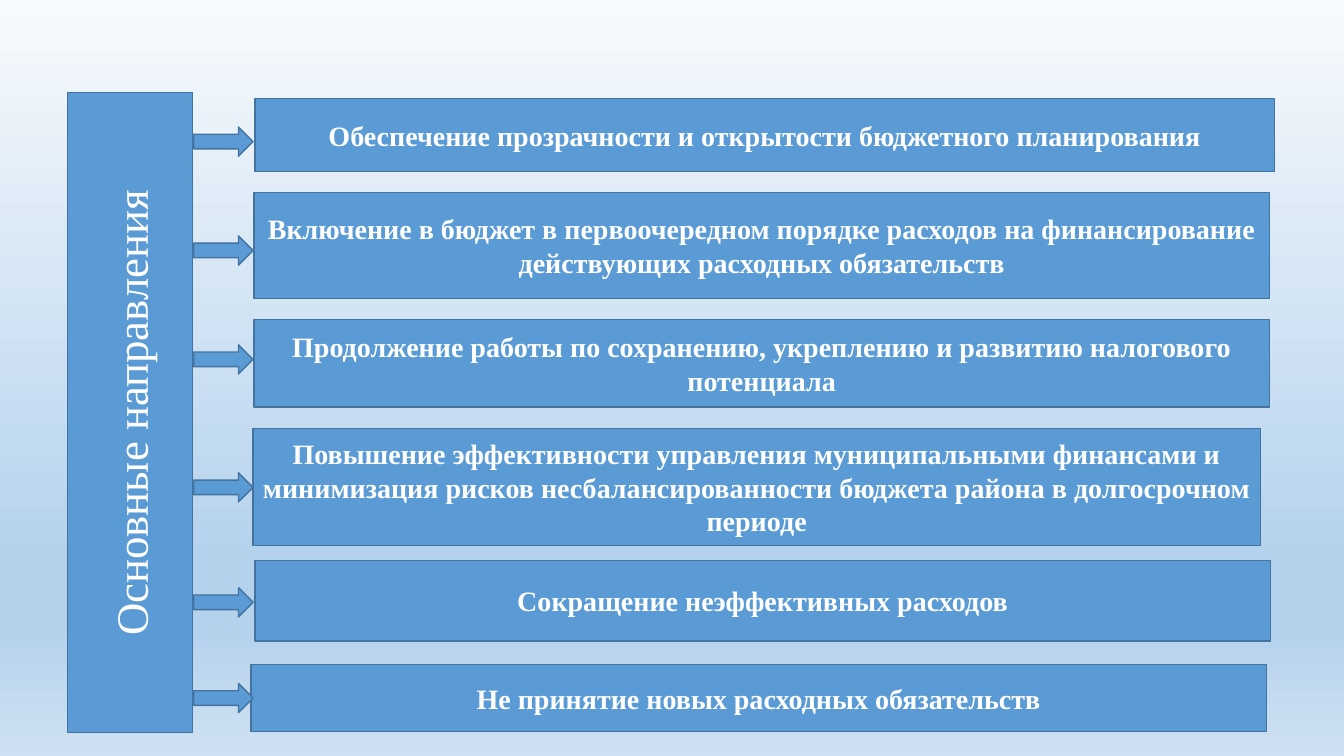
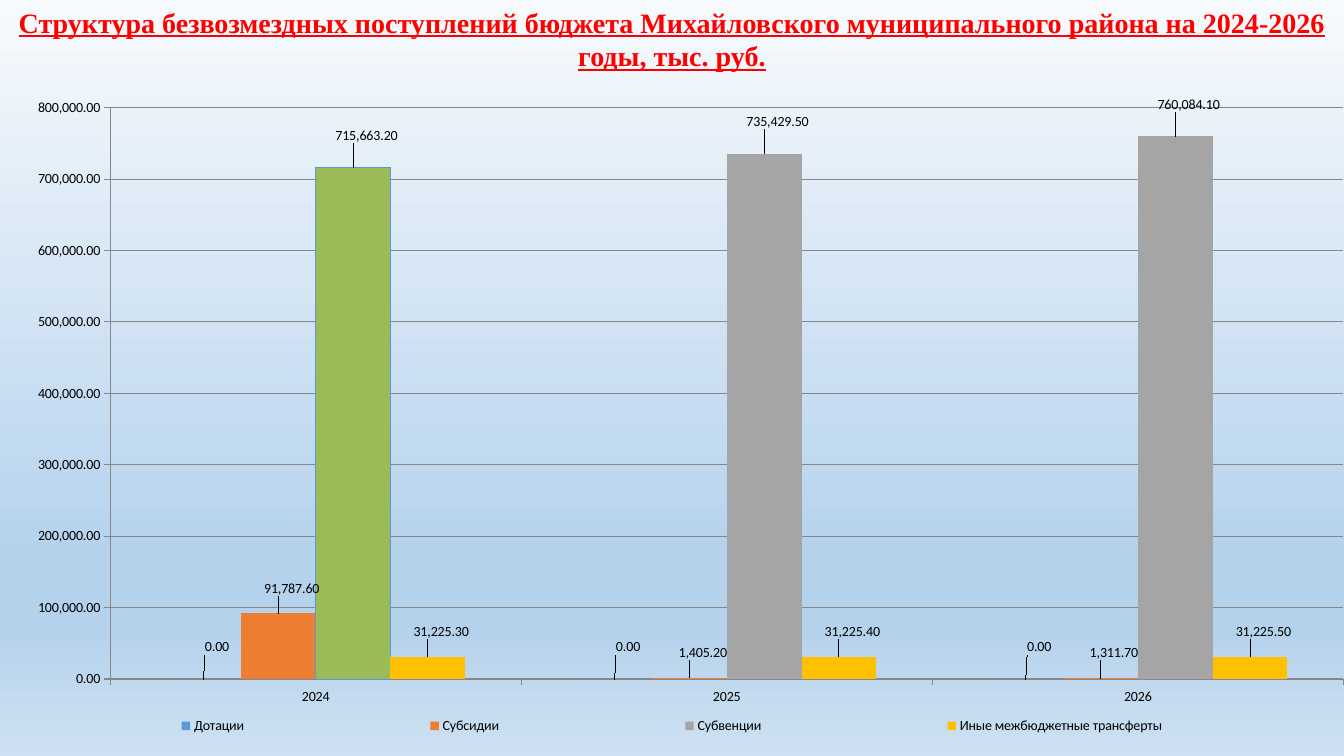
"""Builds two budget slides: the main policy directions and the transfer structure chart."""
from dataclasses import dataclass

from lxml import etree
from pptx import Presentation
from pptx.chart.data import CategoryChartData
from pptx.dml.color import RGBColor
from pptx.enum.chart import XL_CHART_TYPE, XL_LABEL_POSITION, XL_LEGEND_POSITION, XL_TICK_MARK
from pptx.enum.shapes import MSO_SHAPE
from pptx.enum.text import MSO_ANCHOR, MSO_AUTO_SIZE, PP_ALIGN
from pptx.oxml.ns import qn
from pptx.util import Inches, Pt

COLUMNS = XL_CHART_TYPE.COLUMN_CLUSTERED
OUTSIDE_END = XL_LABEL_POSITION.OUTSIDE_END
LEGEND_BOTTOM = XL_LEGEND_POSITION.BOTTOM
TICK_OUTSIDE = XL_TICK_MARK.OUTSIDE
RECTANGLE = MSO_SHAPE.RECTANGLE
RIGHT_ARROW = MSO_SHAPE.RIGHT_ARROW
ANCHOR_TOP = MSO_ANCHOR.TOP
ANCHOR_MIDDLE = MSO_ANCHOR.MIDDLE
NO_AUTOFIT = MSO_AUTO_SIZE.NONE
CENTER = PP_ALIGN.CENTER

BLUE = RGBColor(0x5B, 0x9B, 0xD5)
DARK_BLUE = RGBColor(0x43, 0x73, 0x9E)
ORANGE = RGBColor(0xED, 0x7D, 0x31)
GRAY = RGBColor(0xA5, 0xA5, 0xA5)
YELLOW = RGBColor(0xFF, 0xC0, 0x00)
AXIS_GRAY = RGBColor(0x87, 0x87, 0x87)
RED = RGBColor(0xFF, 0x00, 0x00)
WHITE = RGBColor(0xFF, 0xFF, 0xFF)
BLACK = RGBColor(0x00, 0x00, 0x00)
SKY_STOPS = (
    (0, RGBColor(0xF7, 0xFA, 0xFD)),
    (74, RGBColor(0xB5, 0xD2, 0xEC)),
    (83, RGBColor(0xB5, 0xD2, 0xEC)),
    (100, RGBColor(0xCE, 0xE1, 0xF2)),
)

SERIF = "Times New Roman"
SANS = "Calibri"
NUMBER_FORMAT = "#,##0.00"
SLIDE_WIDTH = 13.33
SLIDE_HEIGHT = 7.5
ARROW_LEFT = 1.92
ARROW_WIDTH = 0.59
ARROW_HEIGHT = 0.29


@dataclass(frozen=True)
class Box:
    """A rectangle on the slide, in inches."""
    left: float
    top: float
    width: float
    height: float


@dataclass(frozen=True)
class Direction:
    """One policy direction with its box and the top of its arrow."""
    text: str
    box: Box
    arrow_top: float


@dataclass(frozen=True)
class Transfer:
    """One chart series with the upward shift of its labels."""
    name: str
    values: tuple[float, ...]
    color: RGBColor
    label_rise: float


DIRECTIONS = (
    Direction("Обеспечение прозрачности и открытости бюджетного планирования",
              Box(2.53, 0.98, 10.11, 0.72), 1.26),
    Direction("Включение в бюджет в первоочередном порядке расходов на финансирование "
              "действующих расходных обязательств", Box(2.52, 1.91, 10.07, 1.05), 2.34),
    Direction("Продолжение работы по сохранению, укреплению и развитию налогового потенциала",
              Box(2.52, 3.17, 10.07, 0.87), 3.42),
    Direction("Повышение эффективности управления муниципальными финансами и минимизация "
              "рисков несбалансированности бюджета района в долгосрочном периоде",
              Box(2.51, 4.25, 9.99, 1.16), 4.69),
    Direction("Сокращение неэффективных расходов", Box(2.53, 5.56, 10.07, 0.8), 5.83),
    Direction("Не принятие новых расходных обязательств", Box(2.49, 6.59, 10.07, 0.67), 6.78),
)

YEARS = ("2024", "2025", "2026")
TRANSFERS = (
    Transfer("Дотации", (0, 0, 0), BLUE, 0.03),
    Transfer("Субсидии", (91787.6, 1405.2, 1311.7), ORANGE, 0.02),
    Transfer("Субвенции", (715663.2, 735429.5, 760084.1), GRAY, 0.03),
    Transfer("Иные межбюджетные трансферты", (31225.3, 31225.4, 31225.5), YELLOW, 0.02),
)


def lengths(box: Box) -> tuple:
    """Return the four lengths of a box."""
    return Inches(box.left), Inches(box.top), Inches(box.width), Inches(box.height)


def paint_background(master) -> None:
    """Give the slide master the vertical sky gradient."""
    fill = master.background.fill
    fill.gradient()
    fill.gradient_angle = 270
    stops = next(master.element.iter(qn("a:gsLst")))
    for stop in list(stops):
        stops.remove(stop)
    for percent, color in SKY_STOPS:
        stop = etree.SubElement(stops, qn("a:gs"), pos=str(percent * 1000))
        etree.SubElement(stop, qn("a:srgbClr"), val=str(color))


def write_text(frame, text: str, size: float, color: RGBColor,
               bold: bool = False, underline: bool = False) -> None:
    """Write one centred serif paragraph."""
    para = frame.paragraphs[0]
    para.alignment = CENTER
    span = para.add_run()
    span.text = text
    font = span.font
    font.name, font.size, font.bold, font.underline = SERIF, Pt(size), bold, underline
    font.color.rgb = color


def add_blue_shape(slide, kind, box: Box):
    """Draw a blue outlined preset shape."""
    shape = slide.shapes.add_shape(kind, *lengths(box))
    shape.shadow.inherit = False
    shape.fill.solid()
    shape.fill.fore_color.rgb = BLUE
    shape.line.color.rgb = DARK_BLUE
    shape.line.width = Pt(1)
    shape.text_frame.vertical_anchor = ANCHOR_MIDDLE
    return shape


def add_directions_slide(deck) -> None:
    """Build the slide with the main directions."""
    slide = deck.slides.add_slide(deck.slide_layouts[6])
    pillar = add_blue_shape(slide, RECTANGLE, Box(0.67, 0.92, 1.24, 6.35))
    pillar.text_frame._txBody.bodyPr.set("vert", "vert270")
    write_text(pillar.text_frame, "Основные направления", 32, WHITE)
    for direction in DIRECTIONS:
        panel = add_blue_shape(slide, RECTANGLE, direction.box)
        write_text(panel.text_frame, direction.text, 20, WHITE, bold=True)
    for direction in DIRECTIONS:
        add_blue_shape(slide, RIGHT_ARROW,
                       Box(ARROW_LEFT, direction.arrow_top, ARROW_WIDTH, ARROW_HEIGHT))


def set_layout(parent, index: int, **settings) -> None:
    """Place a chart part by a manual layout."""
    for old in parent.findall(qn("c:layout")):
        parent.remove(old)
    layout = etree.Element(qn("c:layout"))
    manual = etree.SubElement(layout, qn("c:manualLayout"))
    for name, value in settings.items():
        etree.SubElement(manual, qn(f"c:{name}"), val=str(value))
    parent.insert(index, layout)


def style_series(series, transfer: Transfer) -> None:
    """Colour a series and shift its value labels."""
    series.format.fill.solid()
    series.format.fill.fore_color.rgb = transfer.color
    labels = series.data_labels
    labels.show_value = True
    labels.number_format = NUMBER_FORMAT
    labels.number_format_is_linked = False
    labels.position = OUTSIDE_END
    for index in range(len(YEARS)):
        series.points[index].data_label.position = OUTSIDE_END
    for label in labels._element.findall(qn("c:dLbl")):
        set_layout(label, 1, x=0.01, y=-transfer.label_rise)


def style_axes(chart) -> None:
    """Format both axes and the gridlines."""
    for axis in (chart.category_axis, chart.value_axis):
        axis.major_tick_mark = TICK_OUTSIDE
        axis.format.line.color.rgb = AXIS_GRAY
    values = chart.value_axis
    values.minimum_scale, values.maximum_scale, values.major_unit = 0, 800000, 100000
    values.has_major_gridlines = True
    values.major_gridlines.format.line.color.rgb = AXIS_GRAY
    values.tick_labels.number_format = NUMBER_FORMAT
    values.tick_labels.number_format_is_linked = False


def add_transfers_chart(slide) -> None:
    """Add the clustered column chart of transfers."""
    data = CategoryChartData(number_format=NUMBER_FORMAT)
    data.categories = YEARS
    for transfer in TRANSFERS:
        data.add_series(transfer.name, transfer.values)
    frame = slide.shapes.add_chart(COLUMNS, *lengths(Box(0, 0.87, SLIDE_WIDTH, 6.63)), data)
    chart = frame.chart
    chart.has_title = False
    chart.font.name, chart.font.size = SANS, Pt(10)
    chart.font.color.rgb = BLACK
    plot = chart.plots[0]
    plot.gap_width, plot.overlap, plot.vary_by_categories = 150, 0, False
    for series, transfer in zip(plot.series, TRANSFERS):
        style_series(series, transfer)
    plot.series[2].points[0].format.line.color.rgb = BLUE
    style_axes(chart)
    chart.has_legend = True
    chart.legend.position = LEGEND_BOTTOM
    chart.legend.include_in_layout = False
    root = chart._chartSpace
    set_layout(next(root.iter(qn("c:plotArea"))), 0, layoutTarget="inner",
               xMode="edge", yMode="edge", x=0.082, y=0.03, w=0.918, h=0.855)
    set_layout(next(root.iter(qn("c:legend"))), 1,
               xMode="edge", yMode="edge", x=0, y=0.92, w=1, h=0.07)


def add_transfers_slide(deck) -> None:
    """Build the titled slide with the transfers chart."""
    slide = deck.slides.add_slide(deck.slide_layouts[5])
    title = slide.shapes.title
    title.left, title.top, title.width, title.height = lengths(Box(0, 0, SLIDE_WIDTH, 0.77))
    frame = title.text_frame
    frame.word_wrap = True
    frame.auto_size = NO_AUTOFIT
    frame.vertical_anchor = ANCHOR_TOP
    write_text(frame, "Структура безвозмездных поступлений бюджета Михайловского "
               "муниципального района на 2024-2026 годы, тыс. руб.",
               20, RED, bold=True, underline=True)
    add_transfers_chart(slide)


def main() -> None:
    """Build and save the deck."""
    deck = Presentation()
    deck.slide_width, deck.slide_height = Inches(SLIDE_WIDTH), Inches(SLIDE_HEIGHT)
    paint_background(deck.slide_master)
    add_directions_slide(deck)
    add_transfers_slide(deck)
    deck.save("out.pptx")


if __name__ == "__main__":
    main()
